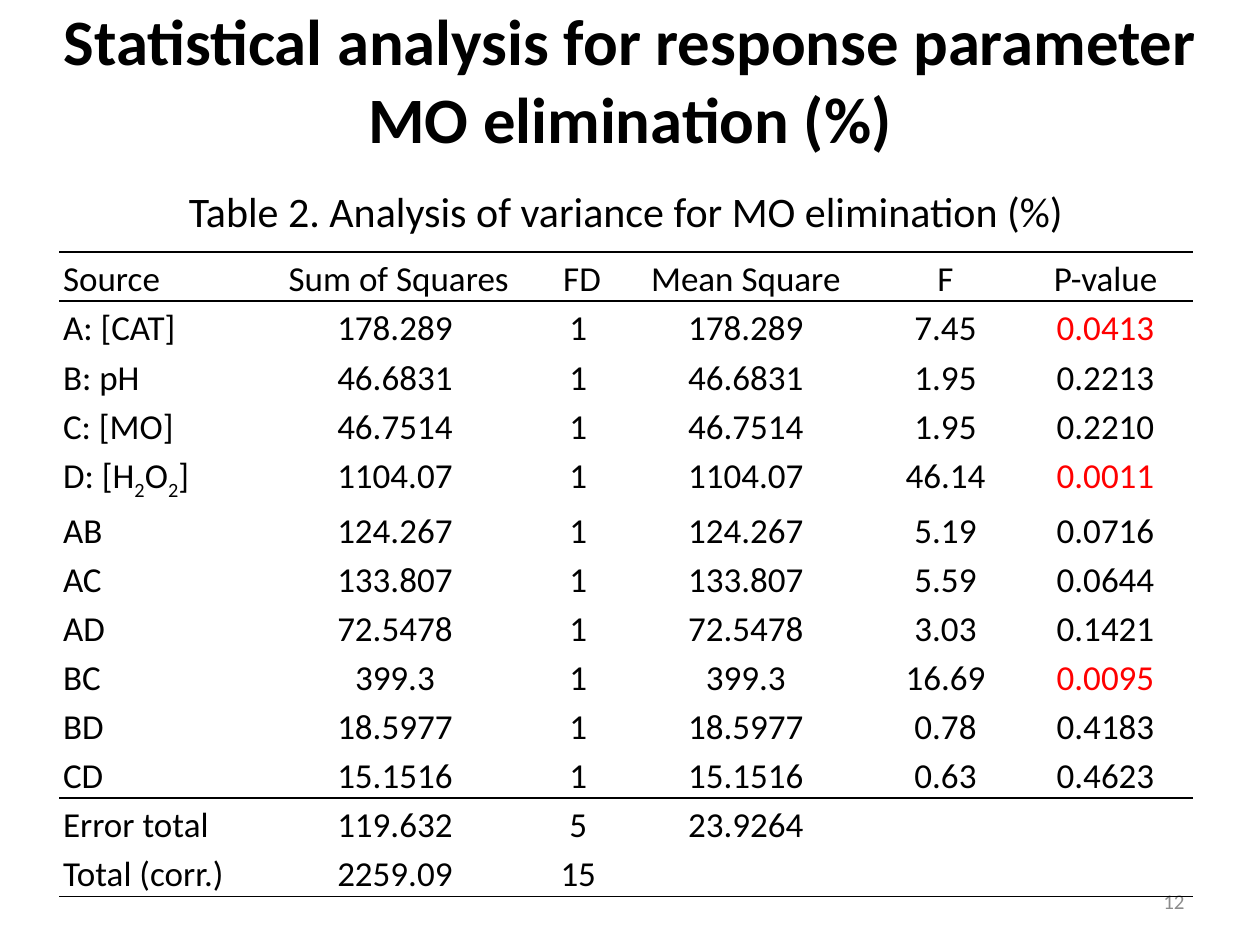
from lxml import etree
from pptx import Presentation
from pptx.dml.color import RGBColor
from pptx.enum.text import MSO_ANCHOR, PP_ALIGN
from pptx.oxml.ns import qn
from pptx.util import Inches, Pt

LEFT, CENTER, RIGHT = PP_ALIGN.LEFT, PP_ALIGN.CENTER, PP_ALIGN.RIGHT
MIDDLE = MSO_ANCHOR.MIDDLE
FONT = "Calibri"
BLACK, RED, GRAY = "000000", "FF0000", "8C8C8C"

COLUMN_WIDTHS = [1.53, 2.27, 0.06, 0.58, 2.02, 1.15, 1.39]
ROW_HEIGHT = 0.39
HEADER_STARTS = [0, 1, 3, 4, 5, 6]
BODY_STARTS = [0, 1, 2, 4, 5, 6]
RULED_EDGES = {0, 1, 11, 13}
SIGNIFICANT = {"0.0413", "0.0011", "0.0095"}
ANOVA = [
    ["Source", "Sum of Squares", "FD", "Mean Square", "F", "P-value"],
    ["A: [CAT]", "178.289", "1", "178.289", "7.45", "0.0413"],
    ["B: pH", "46.6831", "1", "46.6831", "1.95", "0.2213"],
    ["C: [MO]", "46.7514", "1", "46.7514", "1.95", "0.2210"],
    ["D: [H_2_O_2_]", "1104.07", "1", "1104.07", "46.14", "0.0011"],
    ["AB", "124.267", "1", "124.267", "5.19", "0.0716"],
    ["AC", "133.807", "1", "133.807", "5.59", "0.0644"],
    ["AD", "72.5478", "1", "72.5478", "3.03", "0.1421"],
    ["BC", "399.3", "1", "399.3", "16.69", "0.0095"],
    ["BD", "18.5977", "1", "18.5977", "0.78", "0.4183"],
    ["CD", "15.1516", "1", "15.1516", "0.63", "0.4623"],
    ["Error total", "119.632", "5", "23.9264"],
    ["Total (corr.)", "2259.09", "15"],
]


def rgb(value):
    return RGBColor.from_string(value)


def write(tf, text, size=20, color=BLACK, bold=False, align=LEFT, spacing=None):
    p = tf.paragraphs[0]
    p.alignment = align
    if spacing:
        p.line_spacing = spacing
    for i, part in enumerate(text.split("_")):
        r = p.add_run()
        r.text = part
        r.font.name = FONT
        r.font.size = Pt(size)
        r.font.bold = bold
        r.font.color.rgb = rgb(color)
        if i % 2:
            r.font._element.set("baseline", "-25000")


def add_text(s, box, text, wrap=True, **fmt):
    sp = s.shapes.add_textbox(*map(Inches, box))
    tf = sp.text_frame
    tf.word_wrap = wrap
    tf.vertical_anchor = MIDDLE
    write(tf, text, **fmt)


def set_borders(cell, top, bottom):
    tcPr = cell._tc.get_or_add_tcPr()
    sides = [("L", False), ("R", False), ("T", top), ("B", bottom)]
    for i, (side, ruled) in enumerate(sides):
        ln = etree.Element(qn(f"a:ln{side}"), w=str(Pt(1)))
        tcPr.insert(i, ln)
        if ruled:
            fill = etree.SubElement(ln, qn("a:solidFill"))
            etree.SubElement(fill, qn("a:srgbClr"), val=BLACK)
        else:
            etree.SubElement(ln, qn("a:noFill"))


def format_cell(cell, row):
    cell.margin_left = cell.margin_right = Inches(0.03)
    cell.margin_top = cell.margin_bottom = 0
    cell.fill.background()
    set_borders(cell, row in RULED_EDGES, row + 1 in RULED_EDGES)


def add_anova_table(s, left, top, width):
    rows, cols = len(ANOVA), len(COLUMN_WIDTHS)
    frame = s.shapes.add_table(rows, cols, Inches(left), Inches(top),
                               Inches(width), Inches(rows * ROW_HEIGHT))
    table = frame.table
    table.first_row = table.horz_banding = False
    for column, share in zip(table.columns, COLUMN_WIDTHS):
        column.width = Inches(width * share / sum(COLUMN_WIDTHS))
    for i, values in enumerate(ANOVA):
        table.rows[i].height = Inches(ROW_HEIGHT)
        for j in range(cols):
            format_cell(table.cell(i, j), i)
        starts = BODY_STARTS if i else HEADER_STARTS
        merged = 2 if i else 1
        table.cell(i, merged).merge(table.cell(i, merged + 1))
        for j, value in zip(starts, values):
            write(table.cell(i, j).text_frame, value, spacing=1.15,
                  color=RED if value in SIGNIFICANT else BLACK,
                  align=CENTER if j else LEFT)


def build_anova_slide(prs):
    s = prs.slides.add_slide(prs.slide_layouts[6])
    add_text(s, (7.17, 6.95, 2.33, 0.4), "12", size=12, color=GRAY, align=RIGHT)
    add_anova_table(s, 0.47, 2, 9)
    add_text(s, (0, 0, 10, 1.25),
             "Statistical analysis for response parameter MO elimination (%)",
             size=37, bold=True, align=CENTER)
    add_text(s, (1.4, 1.42, 7.2, 0.5),
             "Table 2. Analysis of variance for MO elimination (%)",
             wrap=False, size=24)


def main():
    prs = Presentation()
    prs.slide_width, prs.slide_height = Inches(10), Inches(7.5)
    build_anova_slide(prs)
    prs.save("out.pptx")


if __name__ == "__main__":
    main()
